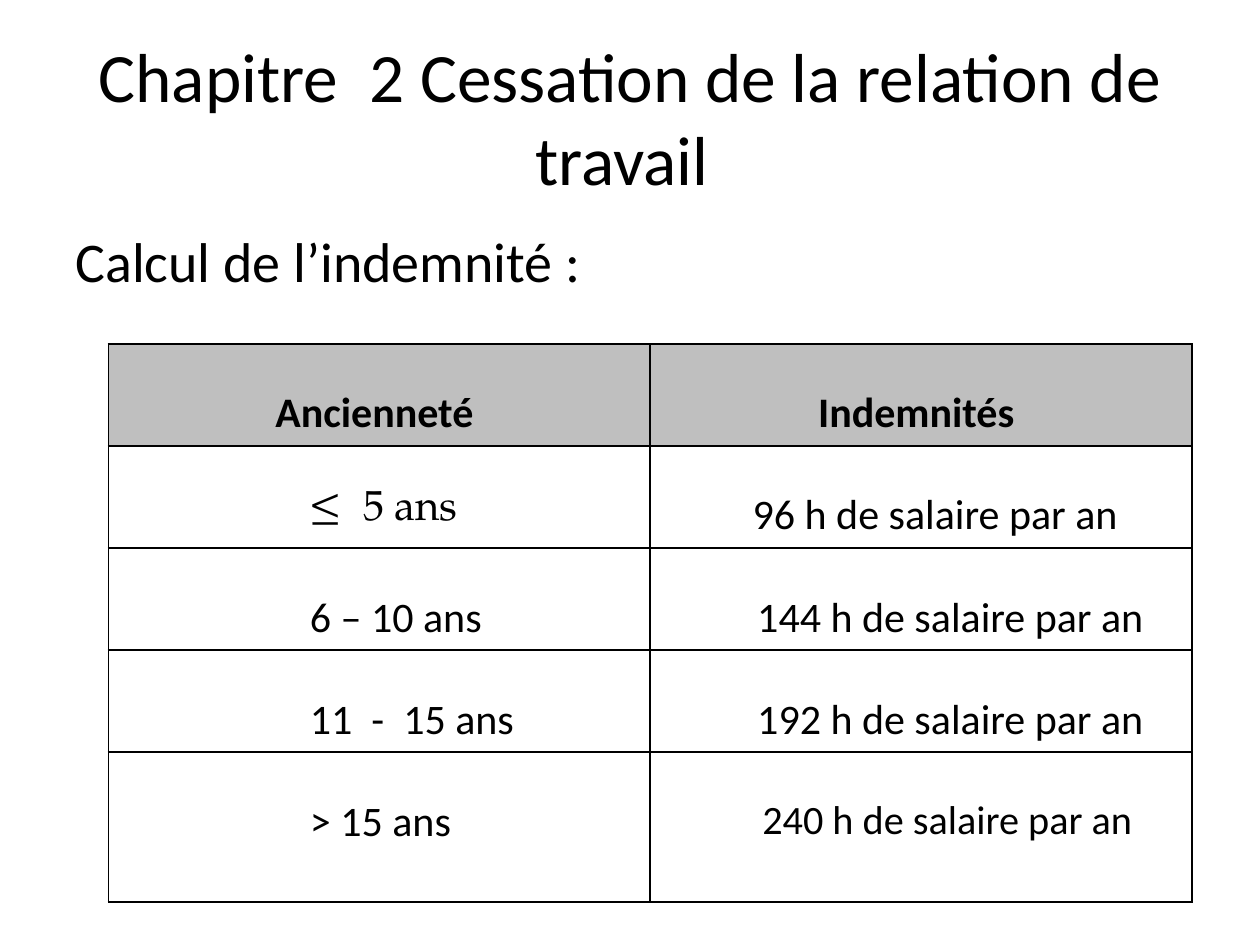
from lxml import etree
from pptx import Presentation
from pptx import util as u
from pptx.dml.color import RGBColor
from pptx.enum import text
from pptx.oxml import ns

BLACK = RGBColor(0x00, 0x00, 0x00)
GREY = RGBColor(0xBF, 0xBF, 0xBF)
WHITE = RGBColor(0xFF, 0xFF, 0xFF)
SANS, SERIF = "Calibri", "TeX Gyre Pagella"
LEFT, CENTER = text.PP_ALIGN.LEFT, text.PP_ALIGN.CENTER


class SlideBuilder:
    def __init__(self, slide):
        self.slide = slide

    def add_words(self, frame, words, size, align=LEFT, **font_values):
        paragraph = frame.paragraphs[0]
        paragraph.alignment = align
        run = paragraph.add_run()
        run.text = words
        values = {"name": SANS, "size": u.Pt(size), "bold": False, **font_values}
        for name, value in values.items():
            setattr(run.font, name, value)
        run.font.color.rgb = BLACK

    def place(self, shape, left, top, width, height):
        box = {"left": left, "top": top, "width": width, "height": height}
        for name, value in box.items():
            setattr(shape, name, u.Inches(value))

    def title(self, words, box):
        shape = self.slide.shapes.title
        self.place(shape, *box)
        shape.text_frame.vertical_anchor = text.MSO_ANCHOR.MIDDLE
        self.add_words(shape.text_frame, words, 39.6, CENTER)

    def text_box(self, words, box):
        shape = self.slide.shapes.add_textbox(*map(u.Inches, box))
        shape.text_frame.word_wrap = True
        self.add_words(shape.text_frame, words, 32)

    def border(self, cell):
        """Draw a thin black line on all four sides of the cell."""
        properties = cell._tc.get_or_add_tcPr()
        for index, side in enumerate(("lnL", "lnR", "lnT", "lnB")):
            line = etree.Element(ns.qn(f"a:{side}"), w=str(u.Pt(1)))
            fill = etree.SubElement(line, ns.qn("a:solidFill"))
            etree.SubElement(fill, ns.qn("a:srgbClr"), val=str(BLACK))
            properties.insert(index, line)

    def cell(self, cell, words, fill, indent=0, size=24, **format_values):
        margins = {"margin_left": 0.1 + indent, "margin_right": 0.1,
                   "margin_top": 0.35, "margin_bottom": 0.05}
        for name, value in margins.items():
            setattr(cell, name, u.Inches(value))
        cell.fill.solid()
        cell.fill.fore_color.rgb = fill
        self.border(cell)
        self.add_words(cell.text_frame, words, size, **format_values)

    def table(self, headers, rows, left, top, column_width, row_heights):
        columns = len(headers)
        frame = self.slide.shapes.add_table(
            len(row_heights), columns, u.Inches(left), u.Inches(top),
            u.Inches(column_width * columns), u.Inches(sum(row_heights)))
        table = frame.table
        for column in table.columns:
            column.width = u.Inches(column_width)
        for row, height in zip(table.rows, row_heights):
            row.height = u.Inches(height)
        for index, words in enumerate(headers):
            self.cell(table.cell(0, index), words, GREY, align=CENTER, bold=True)
        for row_index, row in enumerate(rows, start=1):
            for index, (words, values) in enumerate(row):
                self.cell(table.cell(row_index, index), words, WHITE, **values)


def main():
    presentation = Presentation()
    presentation.slide_width = u.Inches(10)
    presentation.slide_height = u.Inches(7.5)
    slide = presentation.slides.add_slide(presentation.slide_layouts[5])
    builder = SlideBuilder(slide)

    builder.title("Chapitre  2 Cessation de la relation de travail ",
                  (0.5, 0.3, 9, 1.25))
    builder.text_box("Calcul de l’indemnité :", (0.5, 1.75, 9, 0.7))

    seniority = {"indent": 1.5}
    amount = {"indent": 0.75}
    rows = [
        (("≤  5 ans", {**seniority, "name": SERIF}),
         ("96 h de salaire par an ", {"indent": 0.3, "align": CENTER})),
        (("6 – 10 ans", seniority), ("144 h de salaire par an", amount)),
        (("11  -  15 ans", seniority), ("192 h de salaire par an", amount)),
        (("> 15 ans", seniority),
         ("240 h de salaire par an", {"indent": 0.79, "size": 23})),
    ]
    builder.table(("Ancienneté ", "Indemnités "), rows, 0.86, 2.73, 4.3,
                  [0.81] * 4 + [1.19])
    presentation.save("out.pptx")


if __name__ == "__main__":
    main()
